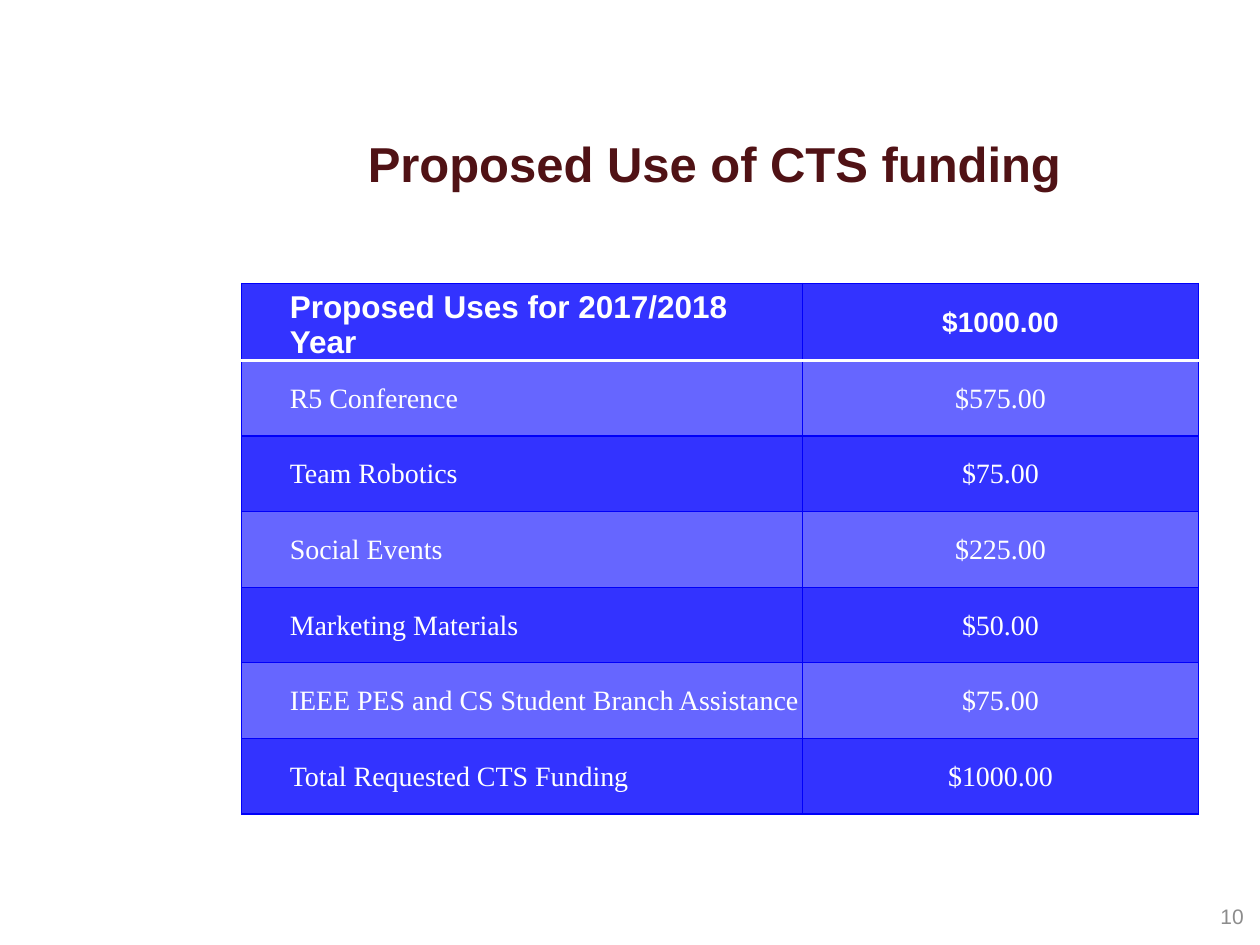
from pptx import Presentation, util as u
from pptx.dml.color import RGBColor
from pptx.enum import text as t
from pptx.oxml import parse_xml
from pptx.oxml.ns import nsdecls

TITLE = "Proposed Use of CTS funding"
PAGE = "10"
ROWS = [
    ("Proposed Uses for 2017/2018 Year", "$1000.00"),
    ("R5 Conference", "$575.00"),
    ("Team Robotics", "$75.00"),
    ("Social Events", "$225.00"),
    ("Marketing Materials", "$50.00"),
    ("IEEE PES and CS Student Branch Assistance", "$75.00"),
    ("Total Requested CTS Funding", "$1000.00"),
]
COLS = (4.45, 3.14)
ROW_H = 0.6
THEME = {
    "head": "Arial", "body": "Times New Roman",
    "title": "501215", "page": "8C8C8C", "text": "FFFFFF",
    "bands": ("3333FF", "6666FF"), "grid": "0000F9", "rule": "FFFFFF",
    "title_pt": 28, "label_pt": 18, "cell_pt": 16, "page_pt": 12,
}
LEFT, CENTER, RIGHT = t.PP_ALIGN.LEFT, t.PP_ALIGN.CENTER, t.PP_ALIGN.RIGHT
MIDDLE, BOTTOM = t.MSO_ANCHOR.MIDDLE, t.MSO_ANCHOR.BOTTOM


def write(frame, words, face, size, color, align, bold=False):
    par = frame.paragraphs[0]
    par.text = words
    par.alignment = align
    font = par.font
    font.name, font.size, font.bold = face, u.Pt(size), bold
    font.color.rgb = RGBColor.from_string(color)


def add_text(slide, box, *style):
    frame = slide.shapes.add_textbox(*map(u.Inches, box)).text_frame
    frame.word_wrap = True
    frame.vertical_anchor = MIDDLE
    write(frame, *style)


def add_edge(cell, side, color, width):
    cell._tc.get_or_add_tcPr().append(parse_xml(
        f'<a:ln{side} {nsdecls("a")} w="{u.Pt(width)}"><a:solidFill>'
        f'<a:srgbClr val="{color}"/></a:solidFill></a:ln{side}>'))


def style_cell(cell, words, row, col):
    head, label = row == 0, col == 0
    cell.margin_left = u.Inches(0.38 if label else 0.01)
    cell.margin_right = cell.margin_top = u.Inches(0.01)
    cell.margin_bottom = 0
    cell.vertical_anchor = BOTTOM if head and label else MIDDLE
    write(cell.text_frame, words, THEME["head" if head else "body"],
          THEME["label_pt" if head and label else "cell_pt"],
          THEME["text"], LEFT if label else CENTER, head)
    # Edges must come before the fill in the cell properties.
    for side in "LRTB":
        rule = (side, row) in (("B", 0), ("T", 1))
        add_edge(cell, side, THEME["rule" if rule else "grid"],
                 2 if rule else 0.75)
    cell.fill.solid()
    cell.fill.fore_color.rgb = RGBColor.from_string(THEME["bands"][row % 2])


def add_budget(slide, left, top):
    size = (left, top, sum(COLS), ROW_H * len(ROWS))
    table = slide.shapes.add_table(
        len(ROWS), len(COLS), *map(u.Inches, size)).table
    for col, width in zip(table.columns, COLS):
        col.width = u.Inches(width)
    for r, row in enumerate(ROWS):
        table.rows[r].height = u.Inches(ROW_H)
        for c, words in enumerate(row):
            style_cell(table.cell(r, c), words, r, c)


def main():
    deck = Presentation()
    deck.slide_width, deck.slide_height = u.Inches(10), u.Inches(7.5)
    slide = deck.slides.add_slide(deck.slide_layouts[6])
    add_text(slide, (7.64, 7.07, 2.33, 0.4), PAGE, THEME["head"],
             THEME["page_pt"], THEME["page"], RIGHT)
    add_budget(slide, 1.92, 2.25)
    add_text(slide, (1.92, 0.67, 7.5, 1.25), TITLE, THEME["head"],
             THEME["title_pt"], THEME["title"], CENTER, True)
    deck.save("out.pptx")


if __name__ == "__main__":
    main()
